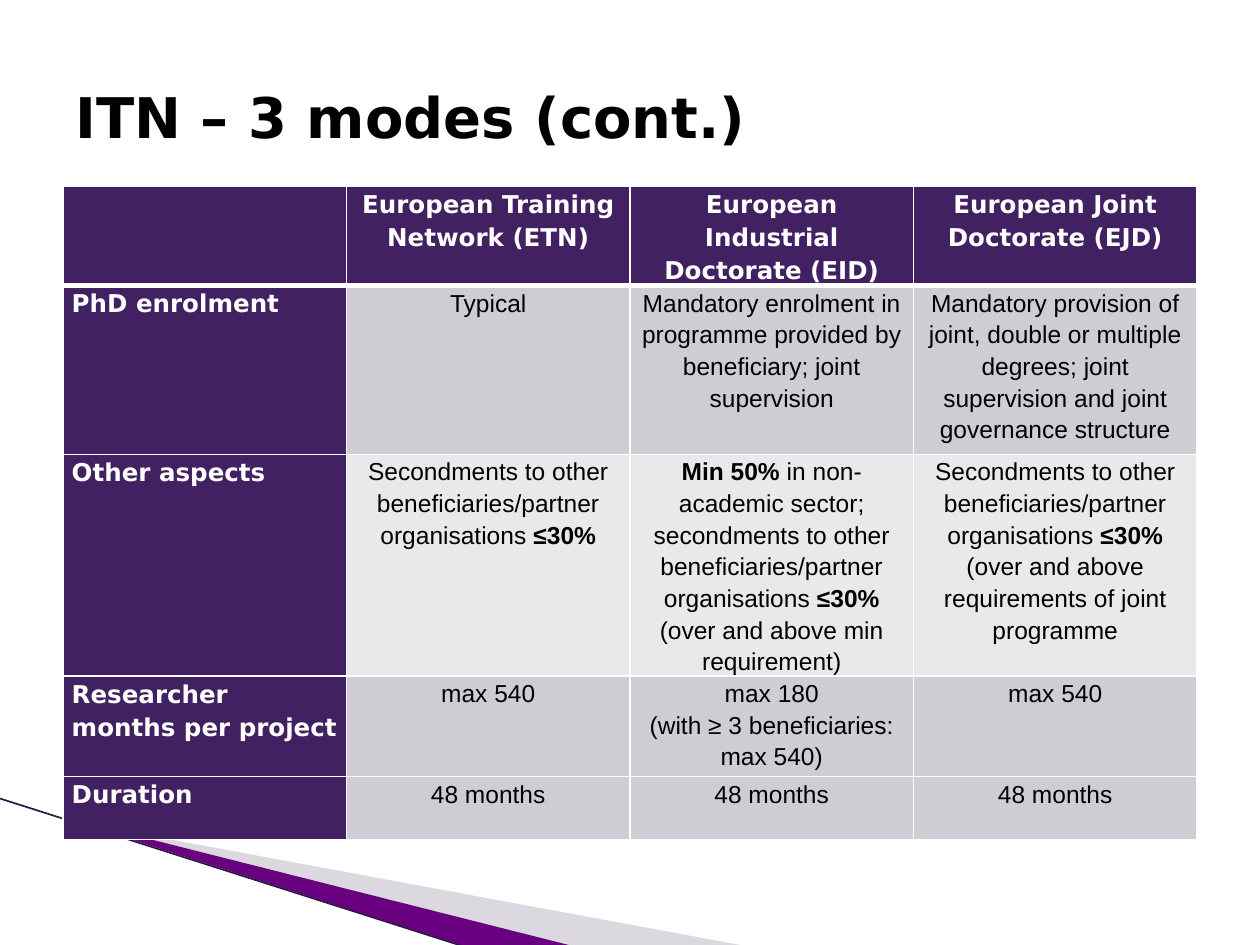
from dataclasses import dataclass

from lxml.etree import SubElement
from pptx import Presentation
from pptx.dml.color import RGBColor
from pptx.enum.shapes import MSO_CONNECTOR
from pptx.enum.text import MSO_ANCHOR, PP_ALIGN
from pptx.oxml.ns import qn
from pptx.util import Pt


@dataclass(frozen=True)
class Theme:
    heading_font: str = "DejaVu Sans"
    body_font: str = "Arial"
    title_size: int = 32
    table_size: int = 14
    ink: str = "000000"
    paper: str = "FFFFFF"
    header: str = "422163"
    band_dark: str = "CFCCD3"
    band_light: str = "E9E8EA"
    wedge_grey: str = "A7A2B1"
    wedge_purple: str = "68007F"
    edge_line: str = "2E1548"


THEME = Theme()

# Double asterisks enclose bold words
MODES = [
    ["", "European Training Network (ETN)", "European Industrial Doctorate (EID)",
     "European Joint Doctorate (EJD)"],
    ["PhD enrolment", "Typical",
     "Mandatory enrolment in programme provided by beneficiary; joint supervision",
     "Mandatory provision of joint, double or multiple degrees; joint supervision "
     "and joint governance structure"],
    ["Other aspects",
     "Secondments to other beneficiaries/partner organisations **≤30%**",
     "**Min 50%** in non-academic sector; secondments to other "
     "beneficiaries/partner organisations **≤30%** (over and above min requirement)",
     "Secondments to other beneficiaries/partner organisations **≤30%** "
     "(over and above requirements of joint programme"],
    ["Researcher months per project", "max 540",
     "max 180\n(with ≥ 3 beneficiaries: max 540)", "max 540"],
    ["Duration"] + ["48 months"] * 3,
]
ROW_HEIGHTS = [56.5, 96.5, 126.5, 57.5, 36]
ROW_FILLS = [THEME.header, THEME.band_dark, THEME.band_light,
             THEME.band_dark, THEME.band_dark]


def rgb(value):
    return RGBColor.from_string(value)


def add_run(paragraph, text, size, heading, color, bold):
    run = paragraph.add_run()
    run.text = text
    formats = {"name": THEME.heading_font if heading else THEME.body_font,
               "size": Pt(size), "bold": bold}
    for name, value in formats.items():
        setattr(run.font, name, value)
    run.font.color.rgb = rgb(color)


def add_wedge(slide, points, color, opacity=None):
    builder = slide.shapes.build_freeform(*map(Pt, points[0]), scale=1.0)
    builder.add_line_segments([(Pt(x), Pt(y)) for x, y in points[1:]])
    wedge = builder.convert_to_shape()
    wedge.shadow.inherit = False
    wedge.fill.solid()
    wedge.fill.fore_color.rgb = rgb(color)
    wedge.line.fill.background()
    if opacity:
        fill_color = wedge.fill._xPr.find(".//" + qn("a:srgbClr"))
        SubElement(fill_color, qn("a:alpha"), val=str(opacity * 1000))


def add_corner(slide, left, top, width, height):
    """Two wedges and a thin edge line fanning out to the bottom."""
    right, bottom = left + width, top + height
    add_wedge(slide, [(left + 1.5, top + 1.5), (right, bottom),
                      (left + 290, bottom), (left + 1.5, top + 0.5)],
              THEME.wedge_grey, opacity=40)
    add_wedge(slide, [(left, top), (left + 291, bottom),
                      (left + 230, bottom + 0.5), (left + 0.5, top + 0.5)],
              THEME.wedge_purple)
    edge = slide.shapes.add_connector(
        MSO_CONNECTOR.STRAIGHT, Pt(left - 39), Pt(top - 11.5),
        Pt(left + 229), Pt(bottom + 0.5))
    edge.line.color.rgb = rgb(THEME.edge_line)
    edge.line.width = Pt(0.95)
    SubElement(edge._element.spPr, qn("a:effectLst"))


def add_title(slide, left, top, width, height):
    box = slide.shapes.add_textbox(Pt(left), Pt(top), Pt(width), Pt(height))
    frame = box.text_frame
    frame.word_wrap = True
    frame.vertical_anchor = MSO_ANCHOR.MIDDLE
    add_run(frame.paragraphs[0], "ITN – 3 modes (cont.)",
            THEME.title_size, True, THEME.ink, True)


def set_borders(cell, row):
    """White rules, with a heavy one under the header row."""
    heavy_side = {0: "B", 1: "T"}.get(row)
    properties = cell._tc.get_or_add_tcPr()
    for side in "LRTB":
        width = Pt(3 if side == heavy_side else 1)
        border = SubElement(properties, qn(f"a:ln{side}"), w=str(width))
        fill = SubElement(border, qn("a:solidFill"))
        SubElement(fill, qn("a:srgbClr"), val=THEME.paper)


def fill_cell(cell, text, row, column):
    heading = row == 0 or column == 0
    set_borders(cell, row)
    cell.fill.solid()
    cell.fill.fore_color.rgb = rgb(THEME.header if heading else ROW_FILLS[row])
    margins = {"margin_left": 5, "margin_right": 5, "margin_top": 0, "margin_bottom": 0}
    for name, value in margins.items():
        setattr(cell, name, Pt(value))
    frame = cell.text_frame
    for index, line in enumerate(text.split("\n")):
        paragraph = frame.add_paragraph() if index else frame.paragraphs[0]
        paragraph.alignment = PP_ALIGN.CENTER if column else PP_ALIGN.LEFT
        paragraph.line_spacing = 1.15
        for part, words in enumerate(line.split("**")):
            if words:
                add_run(paragraph, words, THEME.table_size, heading,
                        THEME.paper if heading else THEME.ink,
                        heading or part % 2 == 1)


def add_modes_table(slide, left, top, width):
    columns = len(MODES[0])
    table = slide.shapes.add_table(
        len(MODES), columns, Pt(left), Pt(top), Pt(width), Pt(sum(ROW_HEIGHTS))).table
    for column in table.columns:
        column.width = Pt(width / columns)
    for row, texts in enumerate(MODES):
        table.rows[row].height = Pt(ROW_HEIGHTS[row])
        for column, text in enumerate(texts):
            fill_cell(table.cell(row, column), text, row, column)


def main():
    deck = Presentation()
    deck.slide_width, deck.slide_height = Pt(720), Pt(540)
    slide = deck.slides.add_slide(deck.slide_layouts[6])
    add_corner(slide, 38, 467.5, 390.5, 73.5)
    add_modes_table(slide, 36, 106.5, 648)
    add_title(slide, 36, 21.5, 568, 90)
    deck.save("out.pptx")


if __name__ == "__main__":
    main()
